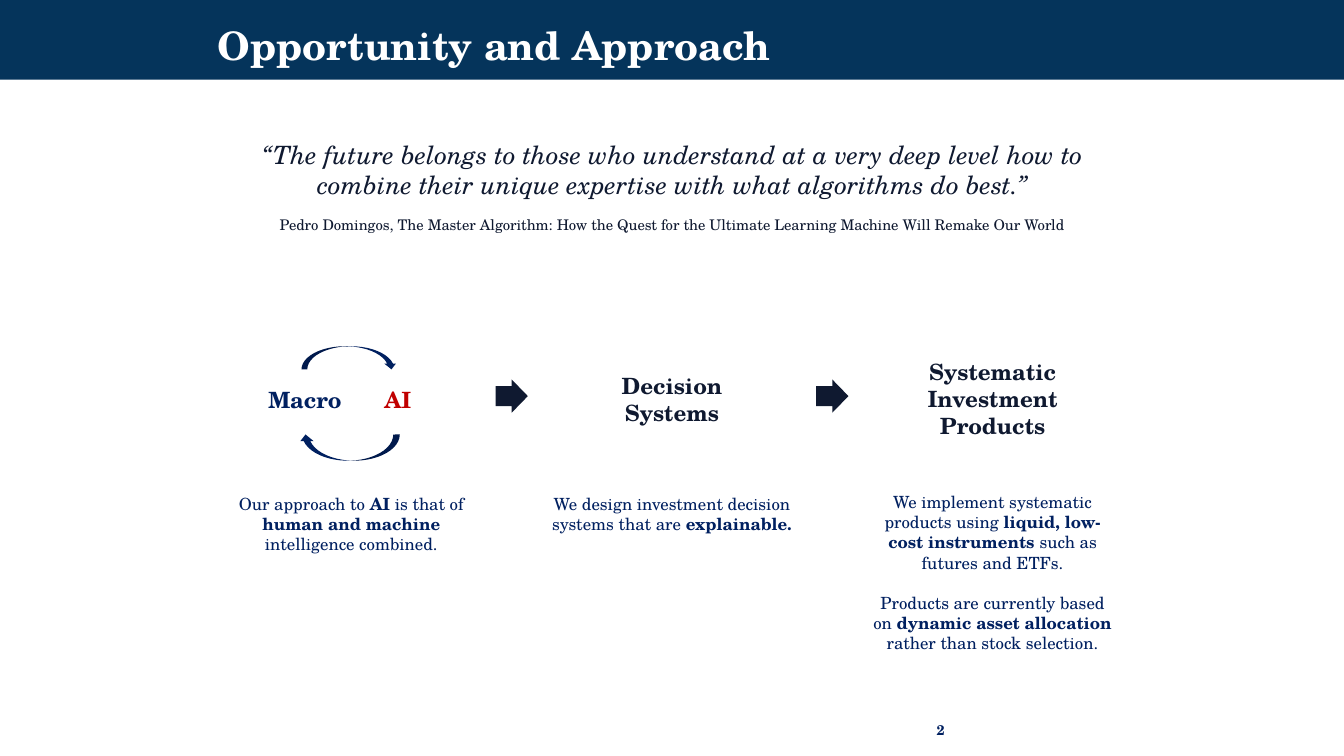
import pptx
import pptx.util
import pptx.dml.color
import pptx.enum.shapes
import pptx.enum.text

# Content: each run is (text, bold)
FONT = "TeX Gyre Schola"
NAVY, INK, RED, BAND, WHITE = "002060", "0F1930", "C00000", "05345B", "FFFFFF"
TITLE = "Opportunity and Approach"
QUOTE = ("“The future belongs to those who understand at a very deep level how to "
         "combine their unique expertise with what algorithms do best.”")
AUTHOR = ("Pedro Domingos, The Master Algorithm: How the Quest for the Ultimate "
          "Learning Machine Will Remake Our World")
PAIR = [("Macro", NAVY), ("AI", RED)]
HEADS = [(1, "Decision Systems", 1.36, 0.64),
         (2, "Systematic Investment Products", 1.72, 0.91)]
NOTES = [  # width, top, height, paragraphs
    (2.87, 4.85, 0.84, [[("Our approach to ", False), ("AI", True),
                         (" is that of ", False), ("human and machine ", True),
                         ("intelligence combined.", False)]]),
    (2.62, 4.85, 0.64, [[("We design investment decision systems that are ", False),
                         ("explainable.", True)]]),
    (2.62, 4.83, 1.85, [[("We implement systematic products using ", False),
                         ("liquid, low-cost instruments ", True),
                         ("such as futures and ETFs.", False)],
                        [("Products are currently based on ", False),
                         ("dynamic asset allocation ", True),
                         ("rather than stock selection.", False)]]),
]

# Grid: three columns about the slide's middle
WIDE, HIGH = 13.33, 7.5
MID, STEP, ROW = WIDE / 2, 3.18, 3.95
COLS = [MID + STEP * (i - 1) for i in range(3)]
LEFT, SPAN = 2.06, 9.22
SHAPE = pptx.enum.shapes.MSO_SHAPE
ALIGN = pptx.enum.text.PP_ALIGN
ANCHOR = pptx.enum.text.MSO_ANCHOR

deck = pptx.Presentation()
deck.slide_width = pptx.util.Inches(WIDE)
deck.slide_height = pptx.util.Inches(HIGH)
slide = deck.slides.add_slide(deck.slide_layouts[6])


def color(code):
    return pptx.dml.color.RGBColor.from_string(code)


def place(left, top, wide, high):
    return [pptx.util.Inches(v) for v in (left, top, wide, high)]


def around(x, y, wide, high):
    return x - wide / 2, y - high / 2, wide, high


def shape(kind, box, fill):
    item = slide.shapes.add_shape(kind, *place(*box))
    item.shadow.inherit = False
    item.fill.solid()
    item.fill.fore_color.rgb = color(fill)
    item.line.fill.background()
    return item


def text(box, paras, size, tint, align=ALIGN.CENTER, bold=None,
         italic=None, anchor=ANCHOR.TOP, gap=0):
    frame = slide.shapes.add_textbox(*place(*box)).text_frame
    frame.word_wrap = True
    frame.vertical_anchor = anchor
    for i, runs in enumerate(paras):
        para = frame.paragraphs[0] if i == 0 else frame.add_paragraph()
        para.alignment = align
        if i:
            para.space_before = pptx.util.Pt(gap)
        font = para.font
        font.name, font.size = FONT, pptx.util.Pt(size)
        font.bold, font.italic = bold, italic
        font.color.rgb = color(tint)
        for words, strong in runs:
            run = para.add_run()
            run.text = words
            if strong:
                run.font.bold = True


def line(box, words, size, tint, **style):
    text(box, [[(words, False)]], size, tint, **style)


# Title band and page number
shape(SHAPE.RECTANGLE, (0, 0, WIDE, 0.79), BAND)
line((LEFT, 0.16, 7.24, 0.57), TITLE, 28, WHITE, align=ALIGN.LEFT, bold=True)
line((9.19, 7.11, 2.31, 0.2), "2", 10, NAVY, align=ALIGN.LEFT, bold=True)

# Quote
line((LEFT, 1.33, SPAN, 0.71), QUOTE, 18, INK, italic=True)
line((LEFT, 2.09, SPAN, 0.28), AUTHOR, 10.5, INK)

# Macro and AI cycle
for side, (word, tint) in zip((-1, 1), PAIR):
    line(around(COLS[0] + side * 0.46, ROW + 0.01, 1.14, 0.39), word, 16, tint,
         bold=True, anchor=ANCHOR.MIDDLE)
for y, wide, high, turn in ((3.55, 0.95, 0.23, 0), (4.44, 1, 0.26, 180)):
    loop = shape(SHAPE.CURVED_DOWN_ARROW,
                 around(COLS[0] - 0.02, y, wide, high), NAVY)
    loop.rotation = turn

# Arrows between columns
for a, b in zip(COLS, COLS[1:]):
    arrow = shape(SHAPE.RIGHT_ARROW,
                  around((a + b) / 2, ROW - 0.02, 0.32, 0.33), INK)
    arrow.adjustments[0] = 0.6
    arrow.adjustments[1] = 0.5

# Column headings and notes
for col, words, wide, high in HEADS:
    line(around(COLS[col], ROW + 0.01, wide, high), words, 16, INK, bold=True)
for x, (wide, top, high, paras) in zip(COLS, NOTES):
    text((x - wide / 2, top, wide, high), paras, 12, NAVY, gap=14.4)

deck.save("out.pptx")
